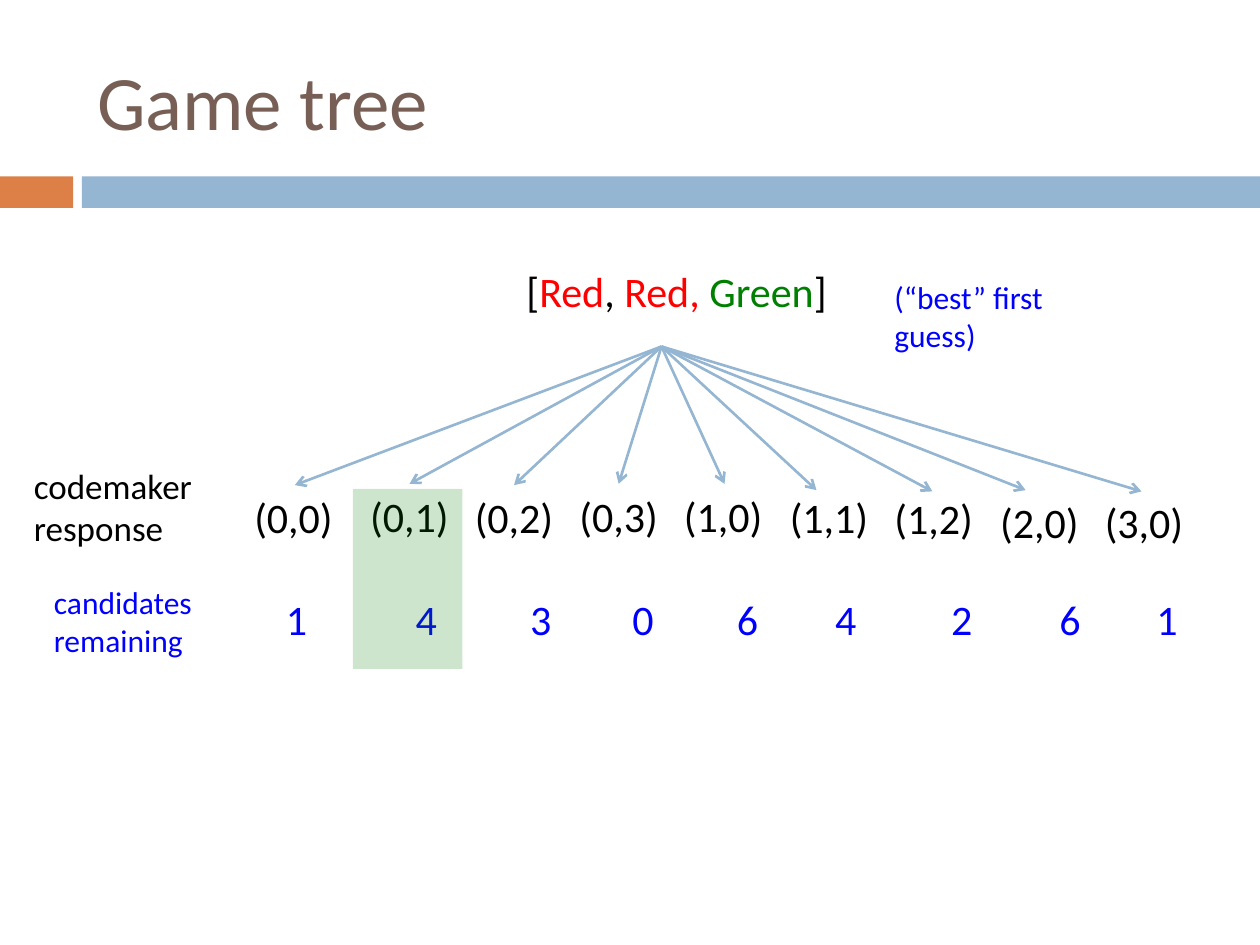
"""Build the game tree slide for the first guess of a code-breaking game."""
from lxml import etree
from pptx import Presentation
from pptx.dml.color import RGBColor
from pptx.enum import shapes, text
from pptx.oxml import ns
from pptx.util import Inches, Pt


def paint(target, color):
    if hasattr(target, "solid"):
        target.solid()
        target = target.fore_color
    target.rgb = RGBColor.from_string(color)


def add_label(page, place, spans, size, wrap=False):
    box = page.shapes.add_textbox(*map(Inches, place))
    box.text_frame.word_wrap = wrap
    para = box.text_frame.paragraphs[0]
    for wording, color in spans:
        span = para.add_run()
        span.text = wording
        span.font.size = Pt(size)
        span.font.name = "Calibri"
        paint(span.font.color, color)


BLACK, BLUE, RED, GREEN, STEEL = "000000", "0000FF", "FF0000", "008000", "94B6D2"

deck = Presentation()
deck.slide_width, deck.slide_height = Inches(10), Inches(7.5)
page = deck.slides.add_slide(deck.slide_layouts[5])

for left, width, color in [(0, 0.58, "DD8047"), (0.65, 9.35, STEEL)]:
    bar = page.shapes.add_shape(shapes.MSO_SHAPE.RECTANGLE, Inches(left), Inches(1.4), Inches(width), Inches(0.25))
    bar.shadow.inherit = False
    paint(bar.fill, color)
    bar.line.fill.background()

title = page.shapes.title
title.left, title.top, title.width, title.height = map(Inches, (0.67, 0.25, 8.92, 1.08))
title.text_frame.text = "Game tree"
title.text_frame.vertical_anchor = text.MSO_ANCHOR.MIDDLE
para = title.text_frame.paragraphs[0]
para.alignment = text.PP_ALIGN.LEFT
para.font.size = Pt(44)
para.font.name = "Calibri"
paint(para.font.color, "775F55")

guess = [("[", BLACK), ("Red", RED), (", ", BLACK), ("Red, ", RED), ("Green", GREEN), ("]", BLACK)]
add_label(page, (4.08, 2.06, 2.6, 0.5), guess, 24)
add_label(page, (7, 2.16, 2.01, 0.4), [("(“best” first guess)", BLUE)], 18, True)
add_label(page, (0.17, 3.64, 2.09, 0.77), [("codemaker response", BLACK)], 20, True)
add_label(page, (0.33, 4.58, 1.43, 0.71), [("candidates remaining", BLUE)], 18, True)

branches = [
    ("(0,0)", 1.92, 3.85, 2.34, 3.85, "1", 2.17),
    ("(0,1)", 2.84, 3.84, 3.25, 3.84, "4", 3.2),
    ("(0,2)", 3.67, 3.85, 4.08, 3.85, "3", 4.11),
    ("(0,3)", 4.5, 3.84, 4.91, 3.84, "0", 4.92),
    ("(1,0)", 5.33, 3.84, 5.75, 3.84, "6", 5.75),
    ("(1,1)", 6.17, 3.85, 6.48, 3.89, "4", 6.53),
    ("(1,2)", 7, 3.86, 7.4, 3.9, "2", 7.45),
    ("(2,0)", 7.84, 3.89, 8.14, 3.89, "6", 8.31),
    ("(3,0)", 8.67, 3.89, 9.06, 3.9, "1", 9.08),
]
for response, left, top, tip_x, tip_y, count, count_left in branches:
    add_label(page, (left, top, 0.83, 0.5), [(response, BLACK)], 24)
    add_label(page, (count_left, 4.66, 0.39, 0.5), [(count, BLUE)], 24)
    arrow = page.shapes.add_connector(
        shapes.MSO_CONNECTOR.STRAIGHT, Inches(5.25), Inches(2.75), Inches(tip_x), Inches(tip_y))
    paint(arrow.line.fill, STEEL)
    arrow.line.width = Pt(1.5)
    etree.SubElement(arrow.line.fill._xPr, ns.qn("a:tailEnd"), type="arrow")
    etree.SubElement(arrow._element.spPr, ns.qn("a:effectLst"))

highlight = page.shapes.add_shape(
    shapes.MSO_SHAPE.RECTANGLE, Inches(2.8), Inches(3.88), Inches(0.87), Inches(1.43))
highlight.shadow.inherit = False
paint(highlight.fill, GREEN)
highlight.line.fill.background()
tint = highlight._element.spPr.find(ns.qn("a:solidFill"))[0]
etree.SubElement(tint, ns.qn("a:alpha"), val="20000")

deck.save("out.pptx")
